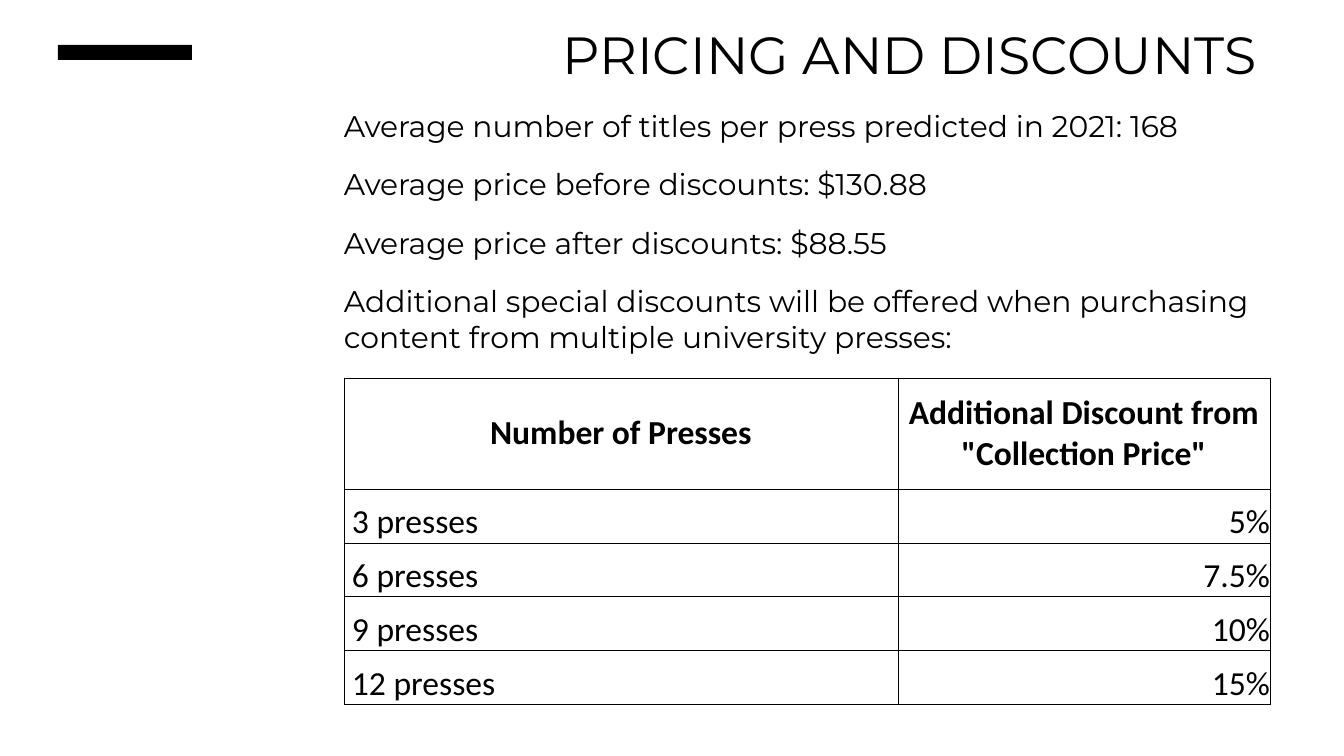
from lxml import etree
from pptx import Presentation
from pptx import util as u
from pptx.dml.color import RGBColor
from pptx.enum import shapes, text
from pptx.oxml.ns import qn

SCALE = 914400 / 134.4
COLORS = {"ink": "000000", "paper": "FFFFFF"}
FACTS = [
    "Average number of titles per press predicted in 2021: 168",
    "Average price before discounts: $130.88",
    "Average price after discounts: $88.55",
    "Additional special discounts will be offered when purchasing "
    "content from multiple university presses:",
]
HEADS = ["Number of Presses", 'Additional Discount from "Collection Price"']
RATES = [(3, "5%"), (6, "7.5%"), (9, "10%"), (12, "15%")]
LEFT = 344


def px(n):
    return u.Emu(round(n * SCALE))


def color(name):
    return RGBColor.from_string(COLORS[name])


def write(frame, lines, size, font="Montserrat", bold=False,
          align=text.PP_ALIGN.LEFT, gap=0, pitch=None):
    """Fill a text frame with one paragraph per line."""
    frame.word_wrap = True
    for i, line in enumerate(lines):
        par = frame.add_paragraph() if i else frame.paragraphs[0]
        par.text = line
        par.alignment = align
        if i:
            par.space_before = u.Pt(gap)
        if pitch:
            par.line_spacing = u.Pt(pitch)
        par.font.name = font
        par.font.size = u.Pt(size)
        par.font.bold = bold
        par.font.color.rgb = color("ink")


def add_text(slide, box, lines, **style):
    frame = slide.shapes.add_textbox(*map(px, box)).text_frame
    frame.margin_left = frame.margin_right = 0
    frame.margin_top = frame.margin_bottom = 0
    write(frame, lines, **style)


def add_mark(slide, box):
    mark = slide.shapes.add_shape(shapes.MSO_SHAPE.RECTANGLE, *map(px, box))
    mark.shadow.inherit = False
    mark.fill.solid()
    mark.fill.fore_color.rgb = color("ink")
    mark.line.fill.background()


def set_edges(cell):
    props = cell._tc.get_or_add_tcPr()
    for side in ("lnL", "lnR", "lnT", "lnB"):
        line = etree.SubElement(props, qn(f"a:{side}"), w=str(u.Pt(0.5)))
        fill = etree.SubElement(line, qn("a:solidFill"))
        etree.SubElement(fill, qn("a:srgbClr"), val=COLORS["ink"])


def set_cell(cell, words, anchor, indent=0, **style):
    set_edges(cell)
    cell.fill.solid()
    cell.fill.fore_color.rgb = color("paper")
    cell.margin_left = px(indent)
    cell.margin_right = cell.margin_top = cell.margin_bottom = 0
    cell.vertical_anchor = anchor
    write(cell.text_frame, [words], size=18, font="Calibri", **style)


def add_rates(slide, left, top, widths, head, row):
    count = len(RATES)
    grid = slide.shapes.add_table(
        count + 1, len(widths), px(left), px(top),
        px(sum(widths)), px(head + count * row)).table
    grid.first_row = grid.horz_banding = False
    for col, width in zip(grid.columns, widths):
        col.width = px(width)
    for i, line in enumerate(grid.rows):
        line.height = px(row if i else head)
    for c, words in enumerate(HEADS):
        set_cell(grid.cell(0, c), words, text.MSO_ANCHOR.MIDDLE,
                 bold=True, align=text.PP_ALIGN.CENTER)
    for r, (count, rate) in enumerate(RATES, 1):
        low = text.MSO_ANCHOR.BOTTOM
        set_cell(grid.cell(r, 0), f"{count} presses", low, indent=8)
        set_cell(grid.cell(r, 1), rate, low, align=text.PP_ALIGN.RIGHT)


def main():
    deck = Presentation()
    deck.slide_width, deck.slide_height = px(1344), px(756)
    slide = deck.slides.add_slide(deck.slide_layouts[6])
    add_mark(slide, (58, 45, 134, 15))
    add_text(slide, (LEFT, 28, 912, 58), ["PRICING AND DISCOUNTS"],
             size=28, align=text.PP_ALIGN.RIGHT, pitch=30.8)
    add_text(slide, (LEFT, 108, 978, 260), FACTS, size=16, gap=12)
    add_rates(slide, LEFT, 378, (554, 372), head=111, row=54)
    deck.save("out.pptx")


if __name__ == "__main__":
    main()
